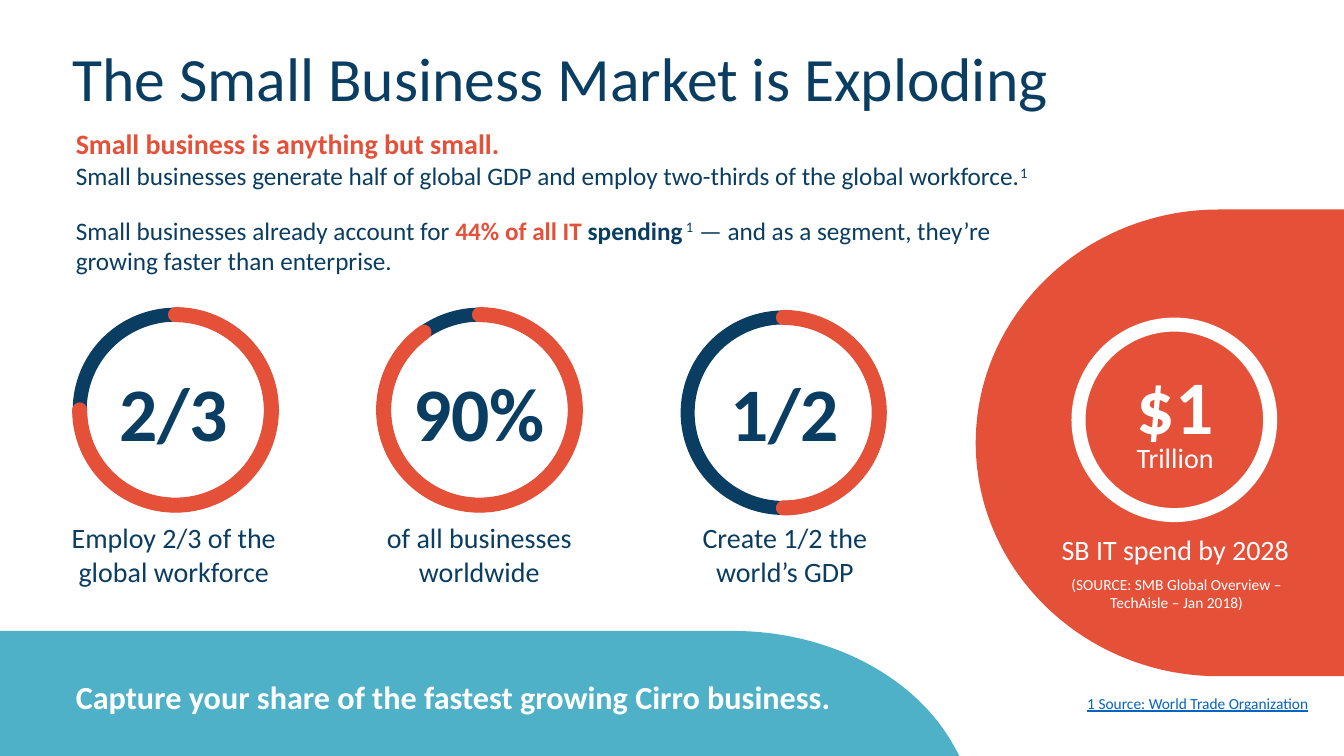
from lxml import etree
from pptx import Presentation
from pptx.dml.color import RGBColor
from pptx.enum import shapes, text
from pptx.oxml.ns import qn
from pptx.util import Cm, Pt

NAVY = RGBColor(0x0A, 0x3D, 0x62)
RED = RGBColor(0xE5, 0x50, 0x39)
TEAL = RGBColor(0x4E, 0xB1, 0xC8)
WHITE = RGBColor(0xFF, 0xFF, 0xFF)
LINK = RGBColor(0x05, 0x63, 0xC1)
FONT = "Calibri"
MID = text.PP_ALIGN.CENTER
LEFT = text.PP_ALIGN.LEFT
RING = (4.83, 4.8)


def style(run, size, color, bold=False, line=False, sup=False):
    font = run.font
    font.name, font.size, font.bold = FONT, Pt(size), bold
    font.color.rgb = color
    if line:
        font.underline = True
    if sup:
        run._r.get_or_add_rPr().set("baseline", "30000")


def label(slide, box, paras, align=LEFT, inset=0.25):
    """Each paragraph is a list of (words, size, color, options)."""
    shape = slide.shapes.add_textbox(*map(Cm, box))
    frame = shape.text_frame
    frame.word_wrap = True
    frame.auto_size = text.MSO_AUTO_SIZE.SHAPE_TO_FIT_TEXT
    frame.margin_left = frame.margin_right = Cm(inset)
    for i, runs in enumerate(paras):
        para = frame.add_paragraph() if i else frame.paragraphs[0]
        para.alignment = align
        for words, size, color, opts in runs:
            run = para.add_run()
            run.text = words
            style(run, size, color, **opts)
    return frame


def solid(slide, x, y, points, bends, color):
    """Outline in cm from x, y; a bend takes three points from its index."""
    spots = [(Cm(x + dx), Cm(y + dy)) for dx, dy in points]
    build = slide.shapes.build_freeform(*spots[0])
    build.add_line_segments(spots[1:], close=True)
    shape = build.convert_to_shape()
    lines = list(shape._element.iter(qn("a:lnTo")))
    for bend in bends:
        trio = lines[bend - 1:bend + 2]
        curve = etree.Element(qn("a:cubicBezTo"))
        trio[0].addprevious(curve)
        for part in trio:
            curve.append(part[0])
            part.getparent().remove(part)
    shape.shadow.inherit = False
    shape.fill.solid()
    shape.fill.fore_color.rgb = color
    shape.line.fill.background()


def stroke(slide, kind, x, y, color, width):
    shape = slide.shapes.add_shape(kind, *map(Cm, (x, y, *RING)))
    shape.shadow.inherit = False
    shape.fill.background()
    shape.line.color.rgb = color
    shape.line.width = Pt(width)
    return shape


def head(slide, x, y):
    # Title
    frame = label(slide, (x - 0.08, y, 29.21, 2.54),
                  [[("The Small Business Market is Exploding", 44, NAVY, {})]])
    frame.auto_size = text.MSO_AUTO_SIZE.NONE
    frame.vertical_anchor = text.MSO_ANCHOR.BOTTOM
    frame.paragraphs[0].line_spacing = 0.9
    # Lead text
    bold, sup = {"bold": True}, {"sup": True}
    label(slide, (x, y + 2.59, 30.35, 1.88), [
        [("Small business is anything but small.", 20, RED, bold)],
        [("Small businesses generate half of global GDP and employ "
          "two-thirds of the global workforce.", 18, NAVY, {}),
         ("1", 18, NAVY, sup)]])
    label(slide, (x, y + 4.81, 25.04, 1.8), [[
        ("Small businesses already account for ", 18, NAVY, {}),
        ("44% of all IT ", 18, RED, bold),
        ("spending", 18, NAVY, bold),
        (" 1", 18, NAVY, sup),
        (" — and as a segment, they’re growing faster than enterprise.",
         18, NAVY, {})]])


def stat(slide, x, y, mid, num, lines, wide, end, drop):
    """Ring whose red arc runs clockwise from the top to the end angle."""
    stroke(slide, shapes.MSO_SHAPE.OVAL, x, y + drop, NAVY, 10)
    arc = stroke(slide, shapes.MSO_SHAPE.ARC, x, y + drop, RED, 10.75)
    arc.adjustments[0] = 270 * 0.6
    arc.adjustments[1] = end * 0.6
    ln = arc.line._get_or_add_ln()
    ln.set("cap", "rnd")
    etree.SubElement(ln, qn("a:round"))
    label(slide, (mid - 2.14, y + 1.17, 4.27, 2.57),
          [[(num, 54, NAVY, {"bold": True})]], MID, 0)
    label(slide, (mid - wide / 2, y + 5.06, wide, 1.96),
          [[(line, 20, NAVY, {})] for line in lines], MID)


def spend(slide, x, y, wide, high):
    # Red panel with a half-oval left side
    rx, ry = 6.12, high / 2
    kx, ky = rx * 0.45, ry * 0.45
    solid(slide, x, y,
          [(rx, 0), (wide, 0), (wide, high), (rx, high),
           (kx, high), (0, high - ky), (0, ry),
           (0, ky), (kx, 0), (rx, 0)], (4, 7), RED)
    # Ring and figures
    stroke(slide, shapes.MSO_SHAPE.OVAL, x + 2.59, y + 2.9, WHITE, 10)
    label(slide, (x + 2.89, y + 3.64, 4.27, 2.57),
          [[("$1", 54, WHITE, {"bold": True})]], MID, 0)
    notes = (("Trillion", 20, 2.89, 5.69, 4.27, 1.12),
             ("SB IT spend by 2028", 20, 0.99, 8.01, 8.08, 1.12),
             ("(SOURCE: SMB Global Overview – TechAisle – Jan 2018)",
              11, 2.12, 9.08, 5.89, 1.19))
    for words, size, dx, dy, w, h in notes:
        label(slide, (x + dx, y + dy, w, h),
              [[(words, size, WHITE, {})]], MID)


def band(slide, x, y, wide, high):
    # Teal strip with a curved right end
    solid(slide, x, y,
          [(0, 0), (18.47, 0), (20.98, 0), (23.16, 1.22), (24.08, 2.97),
           (wide, high), (0, high)], (2,), TEAL)
    label(slide, (x + 1.66, y + 1.04, 23.83, 1.24),
          [[("Capture your share of the fastest growing Cirro business.",
             23, WHITE, {"bold": True})]])
    # Source line
    label(slide, (x + 27.15, y + 1.47, 6.68, 0.74),
          [[("1 Source: World Trade Organization", 11, LINK,
             {"line": True})]])


def main():
    deck = Presentation()
    deck.slide_width, deck.slide_height = Cm(33.87), Cm(19.05)
    slide = deck.slides.add_slide(deck.slide_layouts[6])
    spend(slide, 24.59, 5.28, 9.28, 11.76)
    band(slide, 0, 15.9, 24.18, 3.15)
    head(slide, 1.66, 0.48)
    stats = (("2/3", ["Employ 2/3 of the global workforce"], 7.01, 180, 0),
             ("90%", ["of all businesses worldwide"], 6.25, 234.5, 0),
             ("1/2", ["Create 1/2 the", "world’s GDP"], 8.08, 90, 0.07))
    for i, item in enumerate(stats):
        stat(slide, 2.01 + i * 7.66, 7.93, 4.38 + i * 7.7, *item)
    deck.save("out.pptx")


if __name__ == "__main__":
    main()
